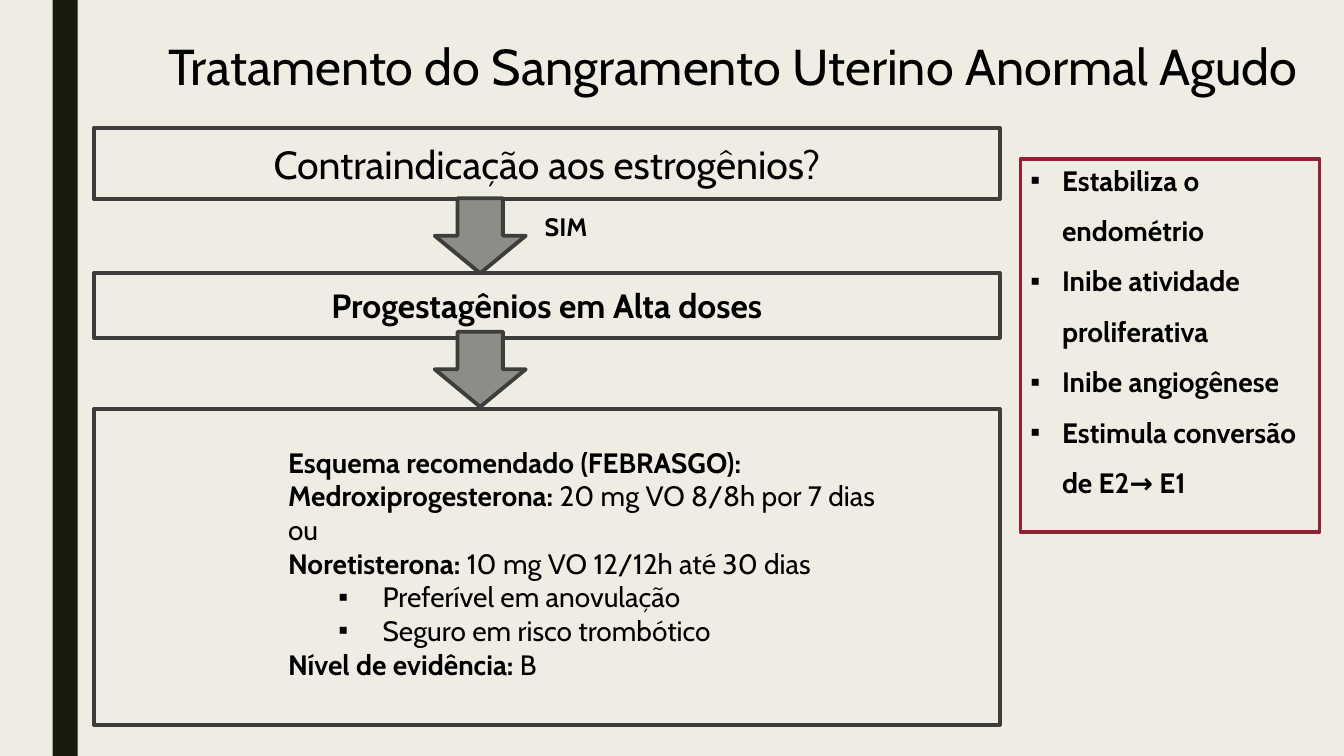
from lxml import etree
from pptx import Presentation
from pptx.dml.color import RGBColor
from pptx.enum.shapes import MSO_SHAPE
from pptx.enum.text import MSO_ANCHOR, MSO_AUTO_SIZE, PP_ALIGN
from pptx.oxml.ns import qn
from pptx.util import Pt

RECTANGLE, DOWN_ARROW = MSO_SHAPE.RECTANGLE, MSO_SHAPE.DOWN_ARROW
TOP, MIDDLE = MSO_ANCHOR.TOP, MSO_ANCHOR.MIDDLE
LEFT, CENTER = PP_ALIGN.LEFT, PP_ALIGN.CENTER
NO_AUTOFIT = MSO_AUTO_SIZE.NONE
TITLE_ONLY = 5
COLORS = {"background": "EFEDE3", "bar": "191B0E", "text": "000000",
          "frame": "3D3E3B", "arrow": "8C8D86", "effects": "912236"}


class SlideBuilder:
    font_name = "Cabin"
    line_width = 2.75

    def __init__(self, presentation):
        self.slide = presentation.slides.add_slide(
            presentation.slide_layouts[TITLE_ONLY])
        self.paint(self.slide.background.fill, "background")

    def paint(self, fill, color):
        if color is None:
            fill.background()
        else:
            fill.solid()
            fill.fore_color.rgb = RGBColor.from_string(COLORS[color])

    def title(self, box, text, size):
        shape = self.slide.shapes.title
        shape.left, shape.top, shape.width, shape.height = map(Pt, box)
        self.add_text(shape, [[(text, False)]], size)

    def shape(self, kind, box, fill=None, line=None):
        shape = self.slide.shapes.add_shape(kind, *map(Pt, box))
        shape.shadow.inherit = False
        self.paint(shape.fill, fill)
        self.paint(shape.line.fill, line)
        if line:
            shape.line.width = Pt(self.line_width)
        return shape

    def text_box(self, box, paragraphs, size, bullet_indent=None):
        shape = self.slide.shapes.add_textbox(*map(Pt, box))
        self.add_text(shape, paragraphs, size, bullet_indent=bullet_indent)

    def add_text(self, shape, paragraphs, size, align=LEFT, anchor=TOP,
                 spacing=1, bullet_indent=None):
        """Fill a shape; a paragraph is a list of (text, bold) runs, or a string for a bullet."""
        frame = shape.text_frame
        frame.word_wrap = True
        frame.auto_size = NO_AUTOFIT
        frame.vertical_anchor = anchor
        for index, content in enumerate(paragraphs):
            paragraph = frame.add_paragraph() if index else frame.paragraphs[0]
            paragraph.alignment = align
            paragraph.line_spacing = spacing
            if isinstance(content, str):
                margin, hanging, bold = bullet_indent
                self.bullet(paragraph, margin, hanging)
                content = [(content, bold)]
            for text, bold in content:
                run = paragraph.add_run()
                run.text = text
                run.font.name = self.font_name
                run.font.size = Pt(size)
                run.font.bold = bold
                run.font.color.rgb = RGBColor.from_string(COLORS["text"])

    def bullet(self, paragraph, margin, hanging):
        properties = paragraph._p.get_or_add_pPr()
        properties.set("marL", str(Pt(margin)))
        properties.set("indent", str(-Pt(hanging)))
        etree.SubElement(properties, qn("a:buFont")).set("typeface", "Arial")
        etree.SubElement(properties, qn("a:buChar")).set("char", "▪")


def main():
    presentation = Presentation()
    presentation.slide_width, presentation.slide_height = Pt(960), Pt(540)
    builder = SlideBuilder(presentation)

    builder.shape(RECTANGLE, (37.5, 0, 18, 540), fill="bar")
    builder.title((113, 21.6, 847, 51),
                  "Tratamento do Sangramento Uterino Anormal Agudo", 36)

    step_left, step_width = 67, 647
    steps = [(91.4, 51, "Contraindicação aos estrogênios?", 28, False),
             (195, 46.3, "Progestagênios em Alta doses", 24, True),
             (292, 225.7, None, None, None)]
    for top, height, text, size, bold in steps:
        frame = builder.shape(RECTANGLE, (step_left, top, step_width, height),
                              line="frame")
        if text:
            builder.add_text(frame, [[(text, bold)]], size, CENTER, MIDDLE)

    for top in (141.6, 237):
        builder.shape(DOWN_ARROW, (310.5, top, 65, 53.6), "arrow", "frame")
    builder.text_box((382, 147.6, 131, 29), [[("SIM", True)]], 18)

    regimen = [
        [("Esquema recomendado (FEBRASGO):", True)],
        [("Medroxiprogesterona: ", True), ("20 mg VO 8/8h por 7 dias", False)],
        [("ou", False)],
        [("Noretisterona: ", True), ("10 mg VO 12/12h até 30 dias", False)],
        "Preferível em anovulação",
        "Seguro em risco trombótico",
        [("Nível de evidência:", True), (" B", False)],
    ]
    builder.text_box((198.7, 314.6, 612, 225), regimen, 20, (67.5, 31.5, False))

    effects = ["Estabiliza o endométrio", "Inibe atividade proliferativa",
               "Inibe angiogênese", "Estimula conversão de E2→ E1"]
    effects_box = builder.shape(RECTANGLE, (729, 113.5, 213.5, 266.5),
                                line="effects")
    effects_box.text_frame.margin_bottom = Pt(36)
    builder.add_text(effects_box, effects, 20, anchor=MIDDLE, spacing=1.5,
                     bullet_indent=(22.5, 22.5, True))

    presentation.save("out.pptx")


if __name__ == "__main__":
    main()
